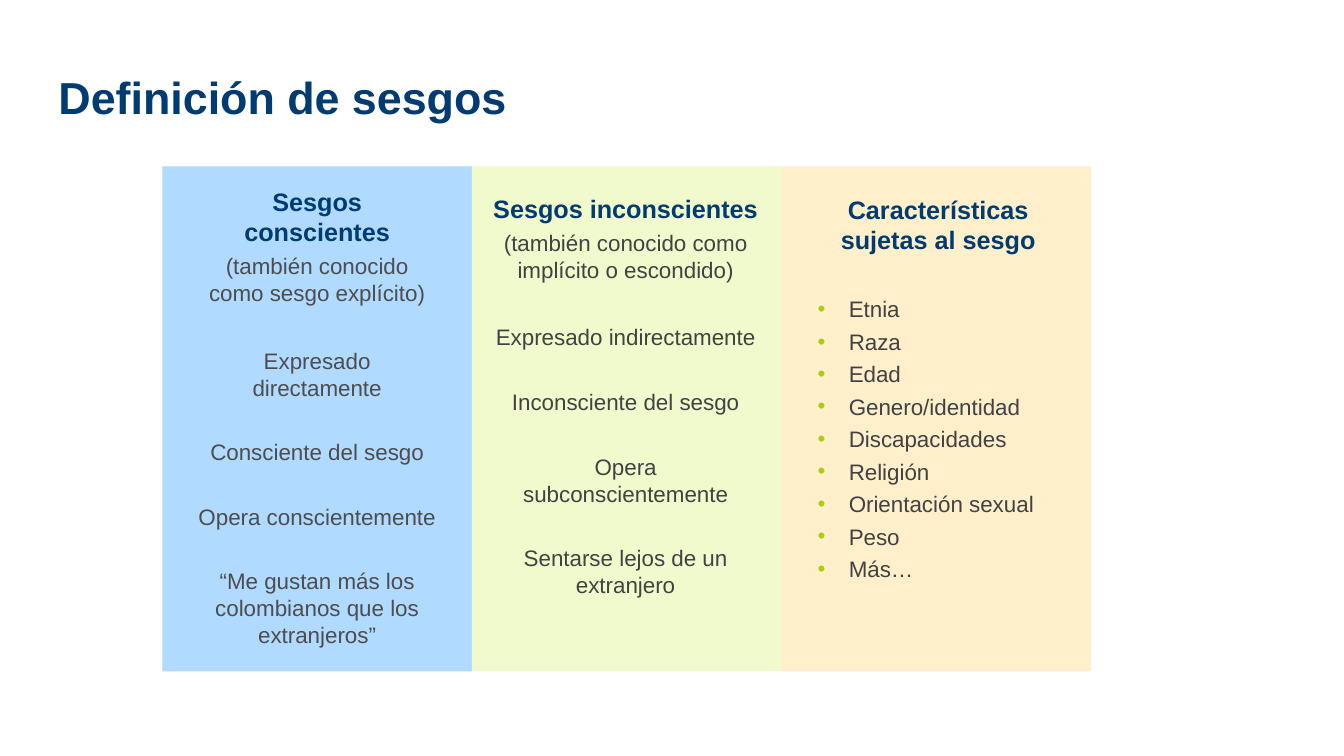
from lxml import etree
from pptx import Presentation
from pptx.dml.color import RGBColor
from pptx.enum.shapes import MSO_SHAPE
from pptx.enum.text import MSO_ANCHOR, MSO_AUTO_SIZE, PP_ALIGN
from pptx.oxml.ns import qn
from pptx.util import Pt

RECT = MSO_SHAPE.RECTANGLE
MIDDLE = MSO_ANCHOR.MIDDLE
GROW = MSO_AUTO_SIZE.SHAPE_TO_FIT_TEXT
LEFT, CENTER = PP_ALIGN.LEFT, PP_ALIGN.CENTER
NAVY, HEAD, GREY, DARK, LIME = "003B72", "003C71", "4D4D4D", "424242", "AACE15"
INDENT = 31

PANELS = [
    dict(fill="B0DAFF", ink=GREY, inset=(24, 15, 259, 475),
         head="Sesgos conscientes", note="(también conocido como sesgo explícito)",
         items=["Expresado directamente", "Consciente del sesgo",
                "Opera conscientemente",
                "“Me gustan más los colombianos que los extranjeros”"]),
    dict(fill="F1FACC", ink=DARK, inset=(11, 22, 283, 417),
         head="Sesgos inconscientes",
         note="(también conocido como implícito o escondido)",
         items=["Expresado indirectamente", "Inconsciente del sesgo",
                "Opera subconscientemente", "Sentarse lejos de un extranjero"]),
    dict(fill="FFEFCB", ink=DARK, inset=(26, 23, 259, 413),
         head="Características sujetas al sesgo", note=None,
         items=["Etnia", "Raza", "Edad", "Genero/identidad", "Discapacidades",
                "Religión", "Orientación sexual", "Peso", "Más…"]),
]


def px(num):
    """Turn px, at 100 to the inch, into EMU."""
    return num * 9144


def color(code):
    """Turn a hex string into a colour."""
    return RGBColor.from_string(code)


def add_run(para, text, size, ink, bold=False):
    """Add one run of Arial text."""
    run = para.add_run()
    run.text = text
    font = run.font
    font.name, font.size, font.bold = "Arial", Pt(size), bold
    font.color.rgb = color(ink)


def add_mark(para):
    """Give a paragraph a lime bullet and a hanging indent."""
    props = para._p.get_or_add_pPr()
    props.set("marL", str(px(INDENT)))
    props.set("indent", str(-px(INDENT)))
    tint = etree.SubElement(props, qn("a:buClr"))
    etree.SubElement(tint, qn("a:srgbClr")).set("val", LIME)
    etree.SubElement(props, qn("a:buFont")).set("typeface", "Arial")
    etree.SubElement(props, qn("a:buChar")).set("char", "•")


def add_line(frame, text, size, ink, bold=False, gap=0, mark=False):
    """Add one paragraph, with a gap above it if asked."""
    first = frame.paragraphs[0]
    para = frame.add_paragraph() if first.runs else first
    if mark:
        add_mark(para)
    para.alignment = LEFT if mark else CENTER
    para.space_after = Pt(4)
    if gap:
        para.space_before = Pt(gap)
    add_run(para, text, size, ink, bold)


def add_title(slide, text, left, top, width, height):
    """Fill and place the title."""
    title = slide.shapes.title
    title.left, title.top = px(left), px(top)
    title.width, title.height = px(width), px(height)
    frame = title.text_frame
    frame.margin_left = frame.margin_right = px(5)
    frame.margin_top = frame.margin_bottom = px(5)
    frame.vertical_anchor = MIDDLE
    frame.word_wrap = True
    para = frame.paragraphs[0]
    para.alignment = LEFT
    para.line_spacing = 0.9
    add_run(para, text, 32, NAVY, True)


def add_panel(slide, panel, left, top, width, height):
    """Draw a coloured panel with its heading and items."""
    back = slide.shapes.add_shape(RECT, px(left), px(top), px(width), px(height))
    back.shadow.inherit = False
    back.fill.solid()
    back.fill.fore_color.rgb = color(panel["fill"])
    back.line.fill.background()

    dx, dy, wide, high = panel["inset"]
    box = slide.shapes.add_textbox(px(left + dx), px(top + dy), px(wide), px(high))
    frame = box.text_frame
    frame.word_wrap = True
    frame.auto_size = GROW
    ink, note = panel["ink"], panel["note"]
    add_line(frame, panel["head"], 18, HEAD, True)
    if note:
        add_line(frame, note, 16, ink)
    for rank, item in enumerate(panel["items"]):
        gap = 25 if rank == 0 else 23 if note else 0
        add_line(frame, item, 16, ink, gap=gap, mark=not note)


def main():
    """Build the slide and save it."""
    deck = Presentation()
    deck.slide_width, deck.slide_height = px(1333), px(750)
    slide = deck.slides.add_slide(deck.slide_layouts[5])
    add_title(slide, "Definición de sesgos", 53, 56, 650, 86)
    left, top, width, height = 161, 165, 307, 501
    for rank, panel in enumerate(PANELS):
        add_panel(slide, panel, left + rank * width, top, width, height)
    deck.save("out.pptx")


if __name__ == "__main__":
    main()
